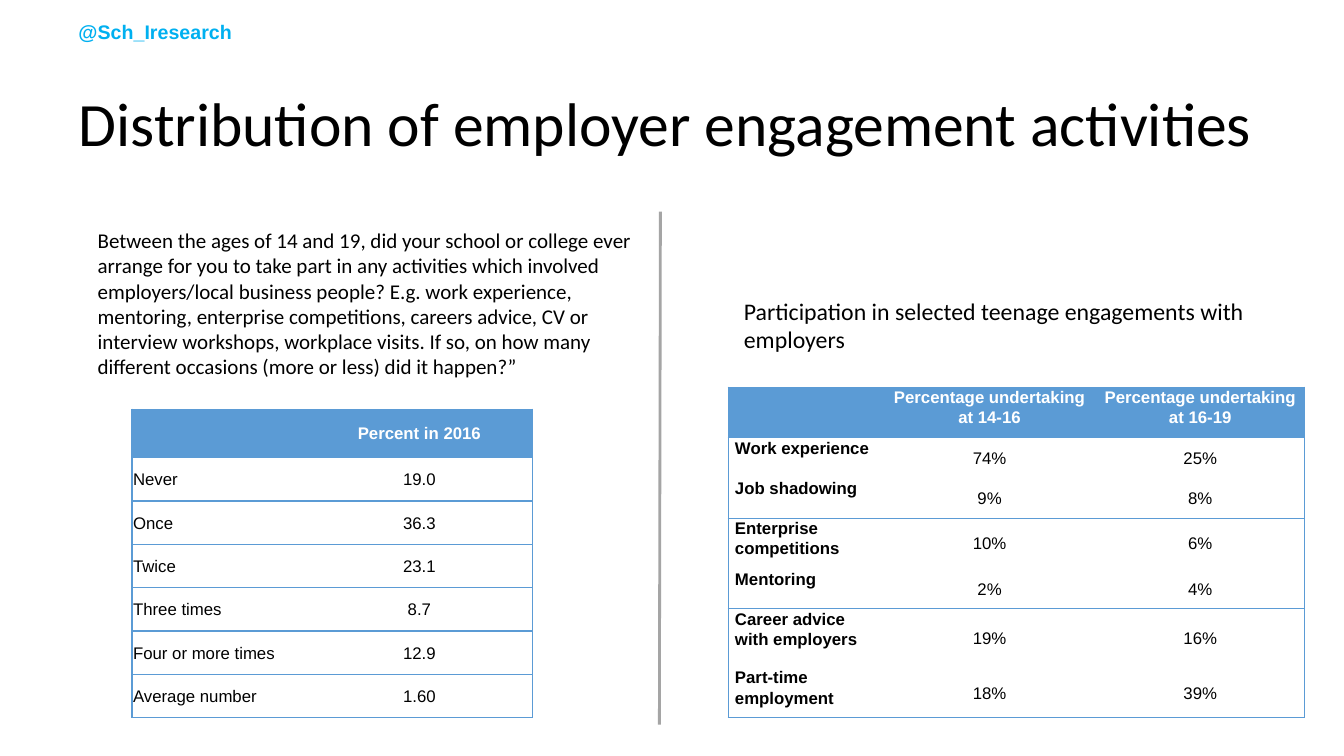
from dataclasses import dataclass

from lxml import etree
from pptx import Presentation
from pptx.dml.color import RGBColor
from pptx.enum.shapes import MSO_CONNECTOR
from pptx.enum.text import MSO_ANCHOR, MSO_AUTO_SIZE, PP_ALIGN
from pptx.oxml.ns import qn
from pptx.util import Pt

PX = 9144
TOP, MIDDLE = MSO_ANCHOR.TOP, MSO_ANCHOR.MIDDLE
LEFT, CENTER = PP_ALIGN.LEFT, PP_ALIGN.CENTER
STRAIGHT = MSO_CONNECTOR.STRAIGHT
NO_AUTOFIT = MSO_AUTO_SIZE.NONE


@dataclass(frozen=True)
class Theme:
    heading_font: str = "Calibri"
    table_font: str = "Arial"
    title_size: int = 44
    caption_size: int = 17
    question_size: int = 15
    handle_size: int = 14
    table_size: int = 12
    black: str = "000000"
    white: str = "FFFFFF"
    blue: str = "5B9BD5"
    grey: str = "A5A5A5"
    cyan: str = "00B0F0"


theme = Theme()


def write(holder, text, font, size, color, bold=False, align=LEFT, anchor=TOP, insets=(10, 10)):
    holder.vertical_anchor = anchor
    holder.margin_left = holder.margin_right = insets[0] * PX
    holder.margin_top = holder.margin_bottom = insets[1] * PX
    holder.text = text
    para = getattr(holder, "text_frame", holder).paragraphs[0]
    para.alignment = align
    for span in para.runs:
        span.font.name = font
        span.font.size = Pt(size)
        span.font.bold = bold
        span.font.color.rgb = RGBColor.from_string(color)
    return para


def draw_borders(cell, edges, width):
    properties = cell._tc.get_or_add_tcPr()
    for position, side in enumerate("LRTB"):
        border = etree.Element(qn(f"a:ln{side}"), w=str(Pt(width)))
        if side in edges:
            fill = etree.SubElement(border, qn("a:solidFill"))
            etree.SubElement(fill, qn("a:srgbClr"), val=theme.blue)
        else:
            etree.SubElement(border, qn("a:noFill"))
        properties.insert(position, border)


deck = Presentation()
deck.slide_width = 1333 * PX
deck.slide_height = 750 * PX
page = deck.slides.add_slide(deck.slide_layouts[5])

title = page.shapes.title
title.left, title.top, title.width, title.height = [n * PX for n in (68, 48, 1221, 145)]
write(title.text_frame, "Distribution of employer engagement activities",
      theme.heading_font, theme.title_size, theme.black, anchor=MIDDLE)
title.text_frame.auto_size = NO_AUTOFIT

QUESTION = (
    "Between the ages of 14 and 19, did your school or college ever arrange for you "
    "to take part in any activities which involved employers/local business people? "
    "E.g. work experience, mentoring, enterprise competitions, careers advice, CV or "
    "interview workshops, workplace visits. If so, on how many different occasions "
    "(more or less) did it happen?”"
)
CAPTION = "Participation in selected teenage engagements with employers"

texts = [
    ((728, 284, 567, 83), CAPTION, theme.heading_font, theme.caption_size, theme.black, False, 10),
    ((87, 216, 581, 184), QUESTION, theme.heading_font, theme.question_size, theme.black, False, 10),
    ((68, 15, 182, 34), "@Sch_Iresearch", theme.table_font, theme.handle_size, theme.cyan, True, 5),
]
for place, text, font, size, color, bold, inset in texts:
    box = page.shapes.add_textbox(*[n * PX for n in place])
    box.text_frame.word_wrap = True
    write(box.text_frame, text, font, size, color, bold, insets=(10, inset))

activities = {
    "origin": (722, 384),
    "columns": [154, 211, 207],
    "heights": [50, 40, 40, 50, 40, 58, 50],
    "rules": {0, 1, 3, 5, 7},
    "border": 0.75,
    "label_bold": True,
    "top_anchored": True,
    "insets": [(7, 0), (7, 0)],
    "rows": [
        ["", "Percentage undertaking at 14-16", "Percentage undertaking at 16-19"],
        ["Work experience", "74%", "25%"],
        ["Job shadowing", "9%", "8%"],
        ["Enterprise competitions", "10%", "6%"],
        ["Mentoring", "2%", "4%"],
        ["Career advice with employers", "19%", "16%"],
        ["Part-time employment", "18%", "39%"],
    ],
}
occasions = {
    "origin": (131, 406),
    "columns": [173, 224],
    "heights": [48] + [43] * 6,
    "rules": set(range(8)),
    "border": 1,
    "label_bold": False,
    "top_anchored": False,
    "insets": [(1, 1), (0, 0)],
    "rows": [
        ["", "Percent in 2016"],
        ["Never", "19.0"],
        ["Once", "36.3"],
        ["Twice", "23.1"],
        ["Three times", "8.7"],
        ["Four or more times", "12.9"],
        ["Average number", "1.60"],
    ],
}

for data in (activities, occasions):
    rows, columns, heights = data["rows"], data["columns"], data["heights"]
    size = (sum(columns), sum(heights))
    frame = page.shapes.add_table(len(rows), len(columns),
                                  *[n * PX for n in data["origin"] + size])
    table = frame.table
    table.horz_banding = False
    for column, width in zip(table.columns, columns):
        column.width = width * PX
    for row, height in zip(table.rows, heights):
        row.height = height * PX

    for r, values in enumerate(rows):
        for c, value in enumerate(values):
            cell = table.cell(r, c)
            header, label = r == 0, c == 0
            at_top = data["top_anchored"] and (header or label)
            para = write(cell, value, theme.table_font, theme.table_size,
                         theme.white if header else theme.black,
                         header or (label and data["label_bold"]),
                         LEFT if label else CENTER,
                         TOP if at_top else MIDDLE,
                         data["insets"][0 if label else 1])
            para.line_spacing = 1.07
            cell.fill.solid()
            cell.fill.fore_color.rgb = RGBColor.from_string(theme.blue if header else theme.white)
            edges = {
                "L": label,
                "R": c == len(columns) - 1,
                "T": r in data["rules"],
                "B": r + 1 in data["rules"],
            }
            draw_borders(cell, [side for side, shown in edges.items() if shown], data["border"])

divider = page.shapes.add_connector(STRAIGHT, *[n * PX for n in (655, 210, 654, 719)])
divider.line.color.rgb = RGBColor.from_string(theme.grey)
divider.line.width = Pt(2)
etree.SubElement(divider._element.spPr, qn("a:effectLst"))

deck.save("out.pptx")
